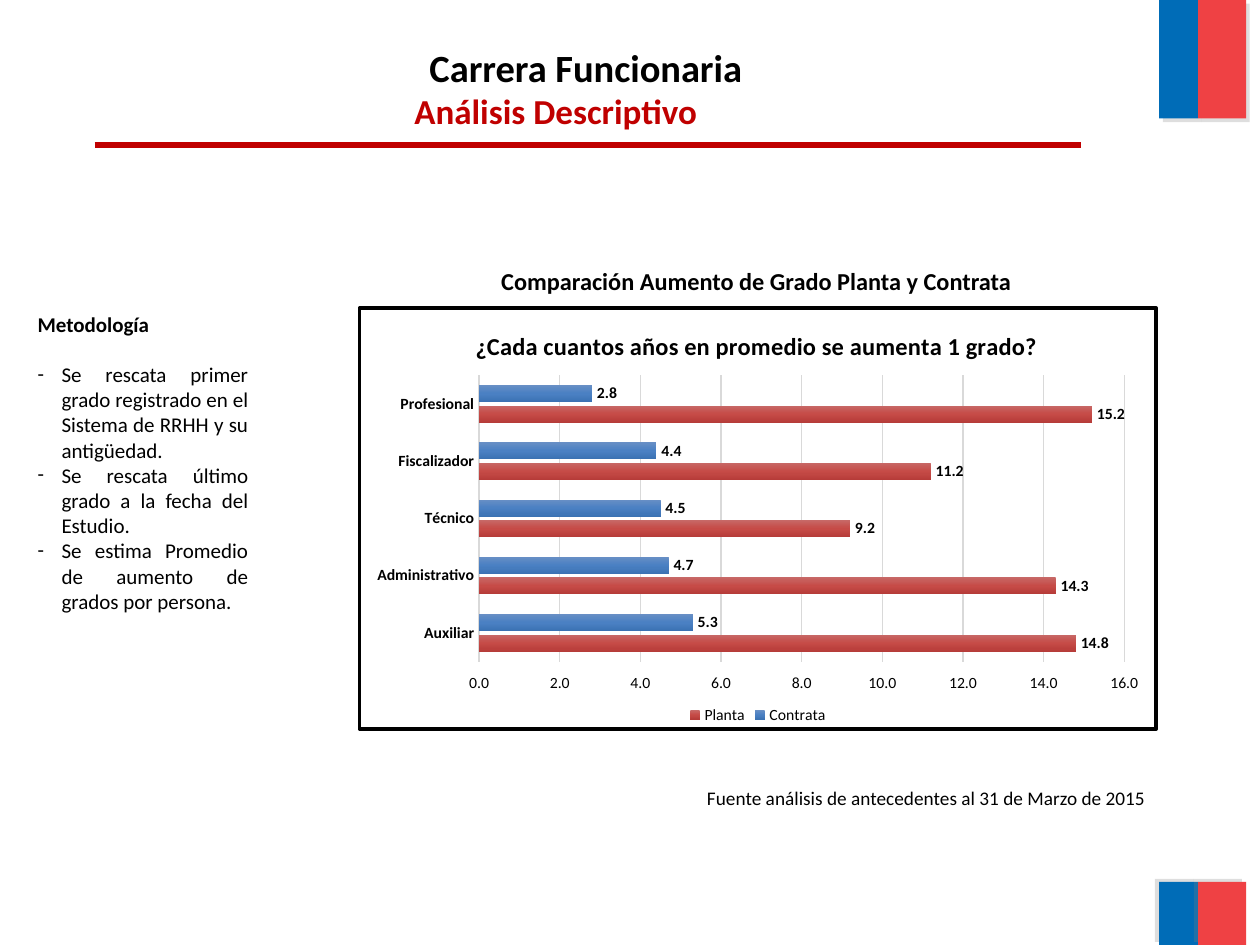
from lxml import etree
from pptx import Presentation
from pptx.chart.data import CategoryChartData
from pptx.dml.color import RGBColor
from pptx.enum.chart import (XL_CHART_TYPE, XL_LABEL_POSITION, XL_LEGEND_POSITION,
                             XL_TICK_LABEL_POSITION, XL_TICK_MARK)
from pptx.enum.shapes import MSO_CONNECTOR, MSO_SHAPE
from pptx.enum.text import MSO_ANCHOR, PP_ALIGN
from pptx.oxml import parse_xml
from pptx.oxml.ns import qn
from pptx.util import Inches, Pt

LEFT, MID, RIGHT, JUST = (PP_ALIGN.LEFT, PP_ALIGN.CENTER, PP_ALIGN.RIGHT,
                          PP_ALIGN.JUSTIFY)
BAR = XL_CHART_TYPE.BAR_CLUSTERED
NO_TICK = XL_TICK_MARK.NONE
HIGH = XL_TICK_LABEL_POSITION.HIGH

COLORS = {"black": "000000", "white": "FFFFFF", "red": "C00000", "grid": "D9D9D9",
          "flag_blue": "006CB7", "flag_red": "EF4144", "shade": "808080"}
NS = ('xmlns:a="http://schemas.openxmlformats.org/drawingml/2006/main" '
      'xmlns:c="http://schemas.openxmlformats.org/drawingml/2006/chart"')

GROUPS = ["Profesional", "Fiscalizador", "Técnico", "Administrativo", "Auxiliar"]
SERIES = [
    ("Contrata", [2.8, 4.4, 4.5, 4.7, 5.3], ["688FC5", "4A80C3", "3B72B3"]),
    ("Planta", [15.2, 11.2, 9.2, 14.3, 14.8], ["C76967", "C64B47", "B63C39"]),
]
STEPS = [
    "Se rescata primer grado registrado en el Sistema de RRHH y su antigüedad.",
    "Se rescata último grado a la fecha del Estudio.",
    "Se estima Promedio de aumento de grados por persona.",
]


def color(name):
    return RGBColor.from_string(COLORS[name])


def box(at):
    return [Inches(n) for n in at]


def style(font, size, bold=False, tint="black"):
    for key, val in {"name": "Calibri", "size": Pt(size), "bold": bold}.items():
        setattr(font, key, val)
    font.color.rgb = color(tint)


def write(par, text, size, bold=False, tint="black", align=LEFT):
    par.alignment = align
    run = par.add_run()
    run.text = text
    style(run.font, size, bold, tint)


def add_text(slide, at, text, size, **look):
    frame = slide.shapes.add_textbox(*box(at)).text_frame
    frame.word_wrap = True
    write(frame.paragraphs[0], text, size, **look)
    return frame


def add_title(slide, at, text):
    title = slide.shapes.title
    title.left, title.top, title.width, title.height = box(at)
    title.text_frame.vertical_anchor = MSO_ANCHOR.TOP
    write(title.text_frame.paragraphs[0], text, 22, bold=True, align=MID)


def add_flag(slide, top, height, angle):
    """Draw a blue and a red block with a soft grey shadow at the angle."""
    for left, width, tint in [(9.2, 0.31, "flag_blue"), (9.51, 0.38, "flag_red")]:
        block = slide.shapes.add_shape(MSO_SHAPE.RECTANGLE,
                                       *box((left, top, width, height)))
        block.fill.solid()
        block.fill.fore_color.rgb = color(tint)
        block.line.fill.background()
        block.shadow.inherit = False
        cast = etree.SubElement(block._element.spPr.find(qn("a:effectLst")),
                                qn("a:outerShdw"), dist=str(Pt(3)),
                                dir=str(angle * 60000), rotWithShape="0")
        shade = etree.SubElement(cast, qn("a:srgbClr"), val=COLORS["shade"])
        etree.SubElement(shade, qn("a:alpha"), val="25000")


def add_rule(slide, left, right, top):
    rule = slide.shapes.add_connector(MSO_CONNECTOR.STRAIGHT,
                                      *box((left, top, right, top)))
    rule.line.color.rgb = color("red")
    rule.line.width = Pt(3)
    etree.SubElement(rule._element.spPr, qn("a:effectLst"))


def add_steps(slide, at):
    frame = add_text(slide, at, "Metodología", 12, bold=True, align=JUST)
    frame.paragraphs[0].space_after = Pt(14.4)
    for step in STEPS:
        par = frame.add_paragraph()
        write(par, step, 12, align=JUST)
        props = par._p.get_or_add_pPr()
        props.set("marL", str(Inches(0.19)))
        props.set("indent", str(-Inches(0.19)))
        etree.SubElement(props, qn("a:buFont"), typeface="Calibri")
        etree.SubElement(props, qn("a:buChar"), char="-")


def place(part, index, inner=False, **spots):
    """Give a chart part a manual layout, as shares of the chart."""
    old = part.find(qn("c:layout"))
    if old is not None:
        part.remove(old)
    target = '<c:layoutTarget val="inner"/>' if inner else ""
    modes = '<c:xMode val="edge"/><c:yMode val="edge"/>'
    sizes = "".join(f'<c:{key} val="{val}"/>' for key, val in spots.items())
    part.insert(index, parse_xml(f"<c:layout {NS}><c:manualLayout>{target}{modes}"
                                 f"{sizes}</c:manualLayout></c:layout>"))


def shade_bars(plot):
    for ser, (_, _, tones) in zip(plot.series, SERIES):
        stops = "".join(f'<a:gs pos="{i * 50000}"><a:srgbClr val="{tone}"/></a:gs>'
                        for i, tone in enumerate(tones))
        ser._element.get_or_add_spPr().append(parse_xml(
            f'<a:gradFill {NS} rotWithShape="1"><a:gsLst>{stops}</a:gsLst>'
            '<a:lin ang="5400000" scaled="0"/></a:gradFill>'))
        ser.invert_if_negative = False


def frame_chart(chart):
    chart._chartSpace.find(qn("c:chart")).addnext(parse_xml(
        f'<c:spPr {NS}><a:solidFill><a:srgbClr val="{COLORS["white"]}"/></a:solidFill>'
        f'<a:ln w="{Pt(2)}"><a:solidFill><a:srgbClr val="{COLORS["black"]}"/>'
        '</a:solidFill></a:ln></c:spPr>'))


def set_axes(chart):
    cat, val = chart.category_axis, chart.value_axis
    for axis, bold in [(cat, True), (val, False)]:
        axis.major_tick_mark = axis.minor_tick_mark = NO_TICK
        style(axis.tick_labels.font, 9, bold)
    cat.reverse_order = True
    val.tick_label_position = HIGH
    val.minimum_scale, val.maximum_scale, val.major_unit = 0, 16, 2
    val.tick_labels.number_format = "0.0"
    val.tick_labels.number_format_is_linked = False
    val.format.line.fill.background()
    for line, width in [(cat.format.line, 1), (val.major_gridlines.format.line, 0.75)]:
        line.color.rgb = color("grid")
        line.width = Pt(width)


def add_bars(slide, at):
    data = CategoryChartData(number_format="0.0")
    data.categories = GROUPS
    for name, vals, _ in SERIES:
        data.add_series(name, vals)
    chart = slide.shapes.add_chart(BAR, *box(at), data).chart
    style(chart.font, 10)
    frame_chart(chart)
    chart.has_title = True
    write(chart.chart_title.text_frame.paragraphs[0],
          "¿Cada cuantos años en promedio se aumenta 1 grado?", 14, bold=True, align=MID)
    place(chart.chart_title._element, 1, x=0.14, y=0.04)

    plot = chart.plots[0]
    plot.gap_width, plot.overlap = 115, -20
    plot.vary_by_categories = False
    plot.has_data_labels = True
    labels = plot.data_labels
    for key, val in {"show_value": True, "number_format": "0.0",
                     "number_format_is_linked": False,
                     "position": XL_LABEL_POSITION.OUTSIDE_END}.items():
        setattr(labels, key, val)
    style(labels.font, 9, True)
    shade_bars(plot)
    set_axes(chart)
    place(chart._chartSpace.find(".//" + qn("c:plotArea")), 0, inner=True,
          x=0.15, y=0.16, w=0.81, h=0.68)

    chart.has_legend = True
    chart.legend.position = XL_LEGEND_POSITION.BOTTOM
    chart.legend.include_in_layout = False
    style(chart.legend.font, 9)


def main():
    deck = Presentation()
    deck.slide_width, deck.slide_height = Inches(10), Inches(7.5)
    slide = deck.slides.add_slide(deck.slide_layouts[5])
    add_flag(slide, 0, 0.94, 45)
    add_flag(slide, 7, 0.5, 215)
    add_title(slide, (0.28, 0.3, 8.74, 0.47), "Carrera Funcionaria")
    add_rule(slide, 0.75, 8.58, 1.15)
    add_bars(slide, (2.84, 2.43, 6.35, 3.37))
    add_text(slide, (3.91, 6.19, 5.28, 0.29),
             "Fuente análisis de antecedentes al 31 de Marzo de 2015", 11, align=RIGHT)
    add_text(slide, (3.19, 0.66, 4.27, 0.38), "Análisis Descriptivo", 20,
             bold=True, tint="red")
    add_text(slide, (3.88, 2.06, 4.4, 0.38),
             "Comparación Aumento de Grado Planta y Contrata", 13.9, bold=True)
    add_steps(slide, (0.2, 2.42, 1.87, 2.73))
    deck.save("out.pptx")


if __name__ == "__main__":
    main()
